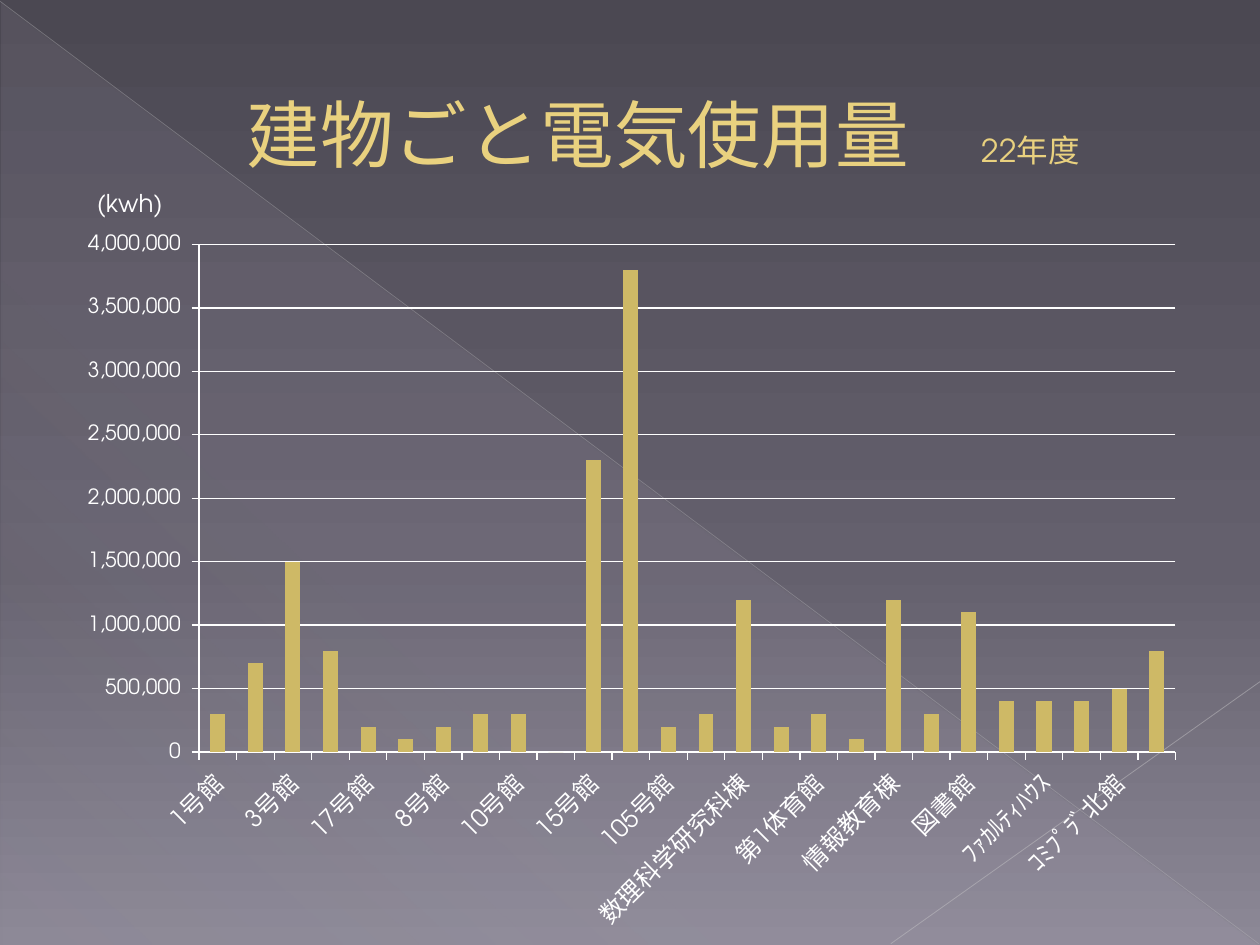
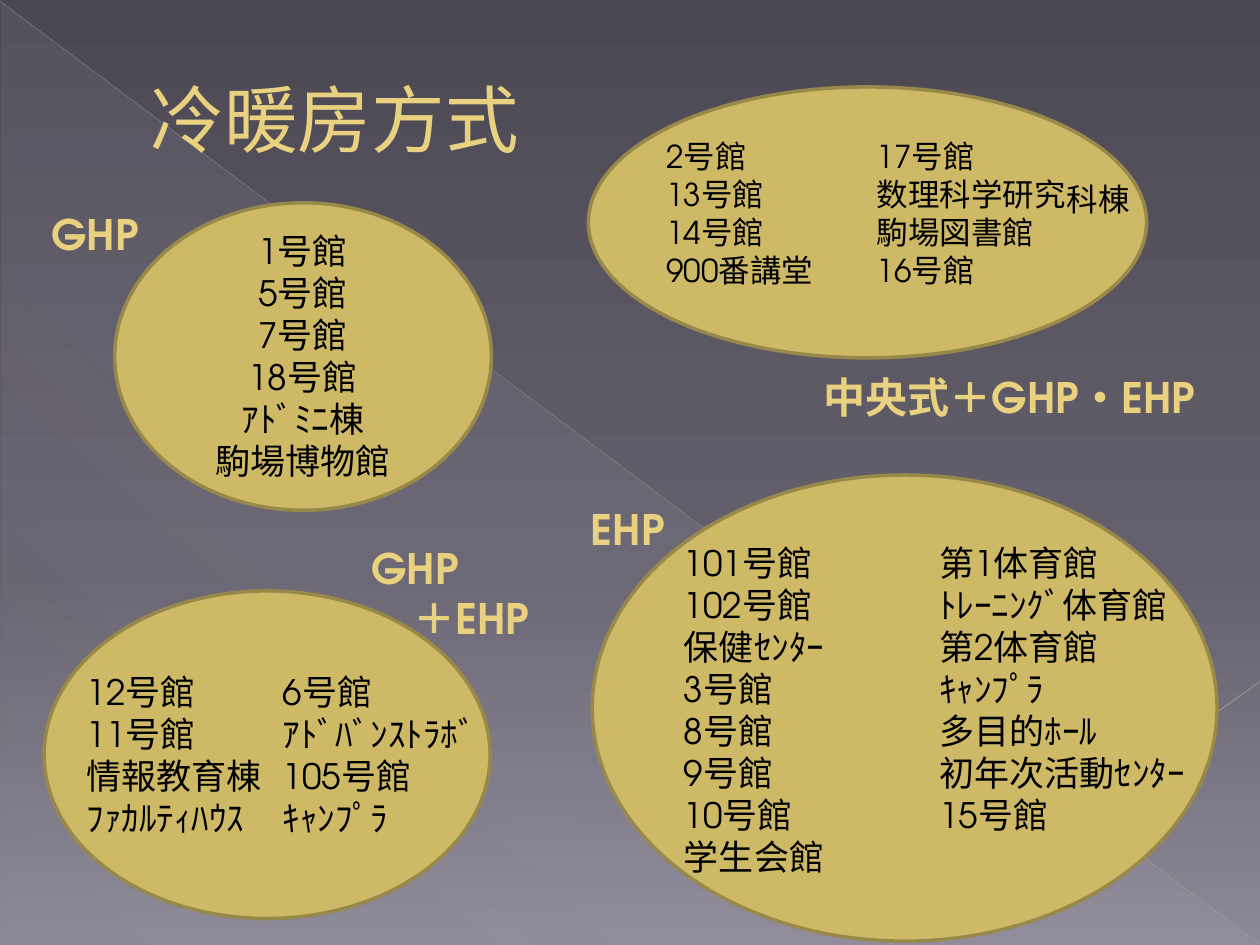
"""Two slides on campus electricity use per building and heating and cooling systems."""
from dataclasses import dataclass

from lxml import etree
from pptx import Presentation
from pptx.chart.data import CategoryChartData
from pptx.dml.color import RGBColor
from pptx.enum.chart import XL_CHART_TYPE, XL_TICK_MARK
from pptx.enum.shapes import MSO_CONNECTOR, MSO_SHAPE
from pptx.enum.text import MSO_ANCHOR, MSO_AUTO_SIZE, PP_ALIGN
from pptx.oxml.ns import qn
from pptx.util import Inches, Pt

COLUMNS = XL_CHART_TYPE.COLUMN_CLUSTERED
TICK_OUT, TICK_NONE = XL_TICK_MARK.OUTSIDE, XL_TICK_MARK.NONE
ELLIPSE, TRIANGLE = MSO_SHAPE.OVAL, MSO_SHAPE.RIGHT_TRIANGLE
STRAIGHT = MSO_CONNECTOR.STRAIGHT
TOP, MIDDLE = MSO_ANCHOR.TOP, MSO_ANCHOR.MIDDLE
LEFT, CENTER = PP_ALIGN.LEFT, PP_ALIGN.CENTER
GROW, FIXED = MSO_AUTO_SIZE.SHAPE_TO_FIT_TEXT, MSO_AUTO_SIZE.NONE


@dataclass(frozen=True)
class Theme:
    latin: str = "TeX Gyre Adventor"
    asian: str = "Noto Sans CJK JP"
    heading: str = "E9D17F"
    heading_edge: str = "8F8047"
    accent: str = "CEB966"
    accent_edge: str = "98894B"
    light: str = "FFFFFF"
    dark: str = "000000"
    backdrop: tuple = ((0, "4B4852", 100), (60, "64606D", 100), (100, "8C8896", 100))
    sheen: tuple = ((0, "C9C2D1", 10), (70, "C9C2D1", 8), (100, "C9C2D1", 1))
    title_size: int = 42
    label_size: int = 24
    list_size: int = 20
    small_size: int = 18
    axis_size: int = 14
    value_size: int = 12


THEME = Theme()

RAYS = [
    ((0, 0.01), (9.99, 7.49), "C0BFC2", 0.39, 35),
    ((10, 5.41), (7.07, 7.49), "C7C6C8", 0.47, 45),
]

USAGE_TITLE = [("建物ごと電気使用量　", THEME.title_size), ("22年度", THEME.small_size)]
USAGE_UNIT = "(kwh)"
USAGE_AT = (0.51, 1.75, 9, 5.75)
USAGE_PLOT_AT = (1.58, 1.94, 7.75, 4.03)
USAGE_100_MWH = [
    ("1号館", 3), ("2号館", 7), ("3号館", 15), ("ｱﾄﾞﾊﾞﾝｽﾄﾗﾎﾞ", 8),
    ("17号館", 2), ("6号館", 1), ("8号館", 2), ("9号館", 3),
    ("10号館", 3), ("11号館", 0), ("15号館", 23), ("16号館", 38),
    ("105号館", 2), ("学生会館", 3), ("数理科学研究科棟", 12), ("講堂", 2),
    ("第1体育館", 3), ("第2体育館", 1), ("情報教育棟", 12), ("ｷｬﾝﾊﾟｽﾌﾟﾗｻﾞ", 3),
    ("図書館", 11), ("学際交流棟", 4), ("ﾌｧｶﾙﾃｨﾊｳｽ", 4), ("18号館", 4),
    ("ｺﾐﾌﾟﾗﾞ北館", 5), ("ｺﾐﾌﾟﾗﾞ南館", 8),
]

SYSTEMS_TITLE = "冷暖房方式"
SYSTEMS = [
    {
        "label": ["GHP"], "label_at": (-0.22, 1.55, 1.77, 0.61),
        "ellipse_at": (0.91, 1.61, 2.99, 2.44), "list_at": (1.34, 1.77, 2.13, 2.12),
        "buildings": ["1号館", "5号館", "7号館", "18号館", "ｱﾄﾞﾐﾆ棟", "駒場博物館"],
        "format": {"align": CENTER},
    },
    {
        "label": ["EHP"], "label_at": (4.06, 3.89, 1.77, 0.61),
        "ellipse_at": (4.7, 3.77, 4.96, 3.7), "list_at": (5.33, 4.25, 4.25, 2.79),
        "buildings": [
            "101号館", "102号館", "保健ｾﾝﾀｰ", "3号館", "8号館", "9号館", "10号館", "学生会館",
            "第1体育館", "ﾄﾚｰﾆﾝｸﾞ体育館", "第2体育館", "ｷｬﾝﾌﾟﾗ", "多目的ﾎｰﾙ",
            "初年次活動ｾﾝﾀｰ", "15号館",
        ],
        "format": {"columns": 2},
    },
    {
        "label": ["GHP", "　＋EHP"], "label_at": (2.32, 4.4, 2.11, 0.61),
        "ellipse_at": (0.35, 4.69, 3.54, 2.6), "list_at": (0.59, 5.27, 3.31, 1.45),
        "buildings": [
            "12号館", "11号館", "情報教育棟", "ﾌｧｶﾙﾃｨﾊｳｽ",
            "6号館", "ｱﾄﾞﾊﾞﾝｽﾄﾗﾎﾞ", "105号館", "ｷｬﾝﾌﾟﾗ",
        ],
        "format": {"columns": 2},
    },
    {
        "label": [[
            ("中央式＋GHP", THEME.label_size),
            ("・", THEME.label_size, THEME.latin),
            ("EHP", THEME.label_size),
        ]],
        "label_at": (5.91, 2.84, 4.09, 0.61),
        "ellipse_at": (4.67, 0.69, 4.43, 2.15), "list_at": (5.19, 1.04, 3.54, 1.31),
        "buildings": [
            "2号館", "13号館", "14号館", "900番講堂",
            "17号館", "数理科学研究", "駒場図書館", "16号館",
        ],
        "format": {"columns": 2, "size": THEME.small_size},
        "overhang": ("科棟", (8.37, 1.38, 0.73, 0.4)),
    },
]


def rgb(color):
    return RGBColor.from_string(color)


def inches(values):
    return [Inches(value) for value in values]


def add_xml(parent, tag, **attributes):
    child = etree.SubElement(parent, qn(tag))
    for key, value in attributes.items():
        child.set(key, str(value))
    return child


def add_color(parent, color, opacity):
    node = add_xml(parent, "a:srgbClr", val=color)
    if opacity < 100:
        add_xml(node, "a:alpha", val=opacity * 1000)


def set_gradient(owner, fill, stops, angle):
    fill.gradient()
    gradient = owner.find(".//" + qn("a:gradFill"))
    gradient.clear()
    stop_list = add_xml(gradient, "a:gsLst")
    for position, color, opacity in stops:
        add_color(add_xml(stop_list, "a:gs", pos=position * 1000), color, opacity)
    add_xml(gradient, "a:lin", ang=angle * 60000, scaled=0)


def add_text(shapes, paragraphs, at, *, size=THEME.list_size, color=THEME.dark, bold=False,
             align=LEFT, anchor=TOP, fit=GROW, columns=1, indent=0, edge=None):
    frame = shapes.add_textbox(*inches(at)).text_frame
    frame.word_wrap = True
    frame.auto_size = fit
    frame.vertical_anchor = anchor
    if columns > 1:
        frame._txBody.bodyPr.set("numCol", str(columns))
    for index, content in enumerate(paragraphs):
        paragraph = frame.paragraphs[0] if index == 0 else frame.add_paragraph()
        paragraph.alignment = align
        if indent:
            properties = paragraph._p.get_or_add_pPr()
            properties.set("marL", str(Inches(indent)))
            properties.set("indent", "0")
        runs = [(content, size)] if isinstance(content, str) else content
        for words, run_size, *asian in runs:
            run = paragraph.add_run()
            run.text = words
            font = run.font
            font.size, font.bold, font.name = Pt(run_size), bold, THEME.latin
            font.color.rgb = rgb(color)
            properties = run._r.get_or_add_rPr()
            typeface = asian[0] if asian else THEME.asian
            properties.find(qn("a:latin")).addnext(
                properties.makeelement(qn("a:ea"), {"typeface": typeface}))
            if edge:
                outline = etree.Element(qn("a:ln"), w=str(Pt(0.5)))
                add_color(add_xml(outline, "a:solidFill"), edge, 100)
                properties.insert(0, outline)


def add_heading(shapes, paragraphs, at, **options):
    add_text(shapes, paragraphs, at, color=THEME.heading, edge=THEME.heading_edge,
             anchor=MIDDLE, fit=FIXED, indent=0.53, **options)


def add_slide(deck):
    slide = deck.slides.add_slide(deck.slide_layouts[6])
    sheen = slide.shapes.add_shape(TRIANGLE, *inches((0.01, 0.02, 9.98, 7.48)))
    sheen.shadow.inherit = False
    set_gradient(sheen._element, sheen.fill, THEME.sheen, 133)
    sheen.line.fill.background()
    for start, end, color, width, opacity in RAYS:
        ray = slide.shapes.add_connector(STRAIGHT, *inches(start + end))
        ray.line.width = Pt(width)
        ray.line.color.rgb = rgb(color)
        properties = ray._element.spPr
        add_xml(properties.find(".//" + qn("a:srgbClr")), "a:alpha", val=opacity * 1000)
        add_xml(properties, "a:effectLst")
    return slide


def style_axis(axis, size):
    axis.major_tick_mark, axis.minor_tick_mark = TICK_OUT, TICK_NONE
    axis.tick_labels.font.size = Pt(size)
    axis.format.line.color.rgb = rgb(THEME.light)
    axis.format.line.width = Pt(0.75)


def set_plot_area(chart, chart_at, plot_at):
    area = chart._chartSpace.chart.plotArea
    for old in area.findall(qn("c:layout")):
        area.remove(old)
    layout = etree.Element(qn("c:layout"))
    manual = add_xml(layout, "c:manualLayout")
    add_xml(manual, "c:layoutTarget", val="inner")
    for side in "xy":
        add_xml(manual, f"c:{side}Mode", val="edge")
    left, top, width, height = chart_at
    plot_left, plot_top, plot_width, plot_height = plot_at
    add_xml(manual, "c:x", val=(plot_left - left) / width)
    add_xml(manual, "c:y", val=(plot_top - top) / height)
    add_xml(manual, "c:w", val=plot_width / width)
    add_xml(manual, "c:h", val=plot_height / height)
    area.insert(0, layout)


def add_usage_chart(shapes):
    usage = CategoryChartData()
    usage.categories = [building for building, _ in USAGE_100_MWH]
    usage.add_series("Series 1", [amount * 100000 for _, amount in USAGE_100_MWH])
    chart = shapes.add_chart(COLUMNS, *inches(USAGE_AT), usage).chart
    chart.has_legend = chart.has_title = False
    chart.font.name, chart.font.size = THEME.latin, Pt(10)
    chart.font.color.rgb = rgb(THEME.light)
    set_plot_area(chart, USAGE_AT, USAGE_PLOT_AT)

    bars = chart.plots[0]
    bars.gap_width = 150
    bars.vary_by_categories = False
    bars.series[0].format.fill.solid()
    bars.series[0].format.fill.fore_color.rgb = rgb(THEME.accent)

    style_axis(chart.category_axis, THEME.axis_size)
    chart.category_axis._element.txPr.find(qn("a:bodyPr")).set("rot", "-2700000")
    amounts = chart.value_axis
    style_axis(amounts, THEME.value_size)
    amounts.minimum_scale, amounts.maximum_scale, amounts.major_unit = 0, 4000000, 500000
    amounts.tick_labels.number_format = "#,##0_ "
    amounts.tick_labels.number_format_is_linked = False
    amounts.major_gridlines.format.line.color.rgb = rgb(THEME.light)
    amounts.major_gridlines.format.line.width = Pt(0.75)


def add_system(slide, system):
    members = slide.shapes.add_group_shape().shapes
    ellipse = members.add_shape(ELLIPSE, *inches(system["ellipse_at"]))
    ellipse.shadow.inherit = False
    ellipse.fill.solid()
    ellipse.fill.fore_color.rgb = rgb(THEME.accent)
    ellipse.line.color.rgb = rgb(THEME.accent_edge)
    ellipse.line.width = Pt(2)
    add_text(members, system["buildings"], system["list_at"], **system["format"])
    if "overhang" in system:
        words, at = system["overhang"]
        add_text(members, [words], at, size=THEME.small_size)


def main():
    deck = Presentation()
    deck.slide_width, deck.slide_height = inches((10, 7.5))
    master = deck.slide_master
    set_gradient(master._element, master.background.fill, THEME.backdrop, 90)

    usage = add_slide(deck)
    add_heading(usage.shapes, [USAGE_TITLE], (0.5, 0.29, 9, 1.53), align=CENTER)
    add_usage_chart(usage.shapes)
    add_text(usage.shapes, [USAGE_UNIT], (0.67, 1.44, 0.79, 0.34),
             size=THEME.axis_size, color=THEME.light)

    systems = add_slide(deck)
    add_heading(systems.shapes, [SYSTEMS_TITLE], (0.57, 0.17, 9, 1.53), size=THEME.title_size)
    for system in SYSTEMS:
        add_system(systems, system)
    for system in SYSTEMS:
        add_heading(systems.shapes, system["label"], system["label_at"],
                    size=THEME.label_size, bold=True)

    deck.save("out.pptx")


if __name__ == "__main__":
    main()
